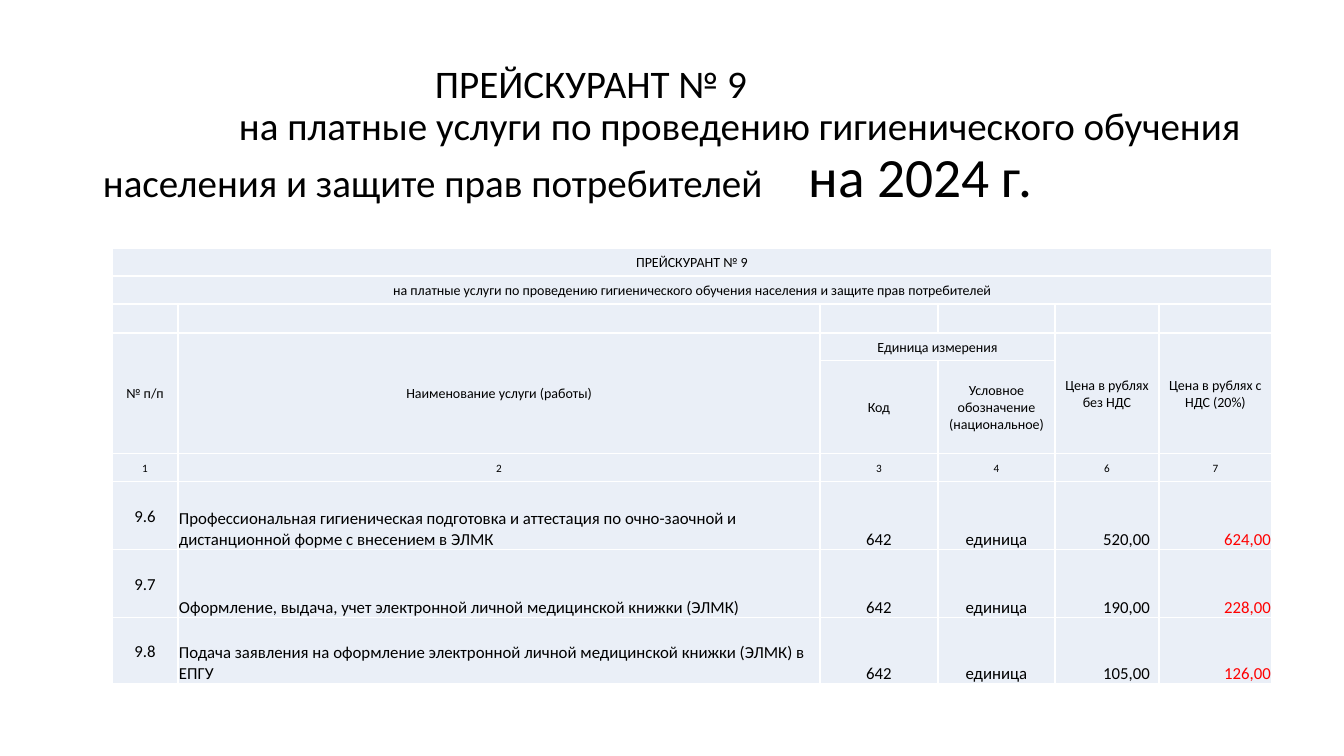
from dataclasses import dataclass

from lxml import etree
from pptx import Presentation
from pptx import util as u
from pptx.dml.color import RGBColor
from pptx.enum import text
from pptx.oxml.ns import qn

PX = 914400 / 100.8


@dataclass(frozen=True)
class Theme:
    """Hold the colours, font and type sizes of the slide."""
    font: str = "Calibri"
    ink: str = "000000"
    accent: str = "FF0000"
    cell: str = "EAEFF7"
    title: float = 27.9
    year: float = 39.6
    head: float = 10
    number: float = 8
    body: float = 12


THEME = Theme()
LEFT, CENTER, RIGHT = text.PP_ALIGN.LEFT, text.PP_ALIGN.CENTER, text.PP_ALIGN.RIGHT
MIDDLE, BOTTOM = text.MSO_ANCHOR.MIDDLE, text.MSO_ANCHOR.BOTTOM

HEADING = "ПРЕЙСКУРАНТ № 9"
SUBJECT = ("на платные услуги по проведению гигиенического обучения "
           "населения и защите прав потребителей")
YEAR = "на 2024 г."

COLUMNS = [66, 642, 118, 117, 104, 113]
ROWS = [28, 28, 29, 28, 93, 28, 68, 68, 66]
HEADER_CELLS = [
    (0, 0, 1, 6, HEADING),
    (1, 0, 1, 6, SUBJECT),
    (3, 0, 2, 1, "№ п/п"),
    (3, 1, 2, 1, "Наименование услуги (работы)"),
    (3, 2, 1, 2, "Единица измерения"),
    (3, 4, 2, 1, "Цена в рублях без НДС"),
    (3, 5, 2, 1, "Цена в рублях с НДС (20%)"),
    (4, 2, 1, 1, "Код"),
    (4, 3, 1, 1, "Условное обозначение (национальное)"),
]
NUMBER_ROW, FIRST_SERVICE_ROW = 5, 6
COLUMN_NUMBERS = ["1", "2", "3", "4", "6", "7"]
SERVICES = [
    ("9.6", "Профессиональная гигиеническая подготовка и аттестация по "
            "очно-заочной и дистанционной форме с внесением в ЭЛМК",
     "642", "единица", "520,00", "624,00"),
    ("9.7", "Оформление, выдача, учет электронной личной медицинской книжки (ЭЛМК)",
     "642", "единица", "190,00", "228,00"),
    ("9.8", "Подача заявления на оформление электронной личной медицинской "
            "книжки (ЭЛМК) в ЕПГУ",
     "642", "единица", "105,00", "126,00"),
]
SERVICE_FORMATS = [
    {"anchor": MIDDLE},
    {"align": LEFT},
    {},
    {},
    {"align": RIGHT, "right": 9},
    {"align": RIGHT, "color": THEME.accent},
]


def px(length):
    """Turn pixels into EMU."""
    return u.Emu(round(length * PX))


def assign(target, values):
    """Set each attribute named in a dict of format values."""
    for name, value in values.items():
        setattr(target, name, value)


def add_span(para, words, size, color=THEME.ink):
    """Add a formatted run to a paragraph."""
    span = para.add_run()
    span.text = words
    assign(span.font, {"name": THEME.font, "size": u.Pt(size)})
    span.font.color.rgb = RGBColor.from_string(color)


def indent(para, first, tab=None):
    """Indent the first line of a paragraph and set an optional tab stop."""
    properties = para._p.get_or_add_pPr()
    properties.set("marL", "0")
    properties.set("indent", str(px(first)))
    if tab:
        stops = etree.SubElement(properties, qn("a:tabLst"))
        etree.SubElement(stops, qn("a:tab"), pos=str(px(tab)), algn="l")


def add_title(page, left, top, width, height):
    """Place the three-line heading in the title placeholder."""
    title = page.shapes.title
    assign(title, {"left": px(left), "top": px(top),
                   "width": px(width), "height": px(height)})
    frame = title.text_frame
    assign(frame, {"word_wrap": True, "auto_size": text.MSO_AUTO_SIZE.NONE,
                   "vertical_anchor": BOTTOM, "margin_left": px(10),
                   "margin_right": px(10), "margin_top": 0,
                   "margin_bottom": px(93)})
    heading, subject = frame.paragraphs[0], frame.add_paragraph()
    for para in (heading, subject):
        assign(para, {"alignment": LEFT, "line_spacing": 0.9,
                      "space_before": u.Pt(0)})
    indent(heading, 332)
    indent(subject, 136, 706)
    add_span(heading, HEADING, THEME.title)
    add_span(subject, SUBJECT, THEME.title)
    add_span(subject, "\t" + YEAR, THEME.year)


def fill_cell(cell, words, size, align=CENTER, anchor=MIDDLE,
              color=THEME.ink, right=1):
    """Write and format the text of one table cell."""
    assign(cell, {"vertical_anchor": anchor, "margin_right": px(right)})
    para = cell.text_frame.paragraphs[0]
    para.alignment = align
    add_span(para, words, size, color)


def add_price_table(page, left, top):
    """Place the price list with its header and service rows."""
    frame = page.shapes.add_table(len(ROWS), len(COLUMNS), px(left), px(top),
                                  px(sum(COLUMNS)), px(sum(ROWS)))
    table = frame.table
    assign(table, {"first_row": False, "horz_banding": False})
    for column, width in zip(table.columns, COLUMNS):
        column.width = px(width)
    for row, height in zip(table.rows, ROWS):
        row.height = px(height)
    for cell in table.iter_cells():
        cell.fill.solid()
        cell.fill.fore_color.rgb = RGBColor.from_string(THEME.cell)
        assign(cell, {"margin_left": px(1), "margin_right": px(1),
                      "margin_top": px(1), "margin_bottom": 0})
        etree.SubElement(cell.text_frame.paragraphs[0]._p, qn("a:endParaRPr"),
                         sz=str(THEME.head * 100))
    for row, column, tall, wide, words in HEADER_CELLS:
        cell = table.cell(row, column)
        if tall * wide > 1:
            cell.merge(table.cell(row + tall - 1, column + wide - 1))
        fill_cell(cell, words, THEME.head)
    for column, words in enumerate(COLUMN_NUMBERS):
        fill_cell(table.cell(NUMBER_ROW, column), words, THEME.number)
    for row, service in enumerate(SERVICES, FIRST_SERVICE_ROW):
        for column, (words, style) in enumerate(zip(service, SERVICE_FORMATS)):
            fill_cell(table.cell(row, column), words, THEME.body,
                      **{"anchor": BOTTOM, **style})


def main():
    """Build the price list slide and save the deck."""
    deck = Presentation()
    assign(deck, {"slide_width": px(1344), "slide_height": px(756)})
    page = deck.slides.add_slide(deck.slide_layouts[5])
    add_title(page, 93, 94, 1159, 208)
    add_price_table(page, 112, 248)
    deck.save("out.pptx")


if __name__ == "__main__":
    main()
